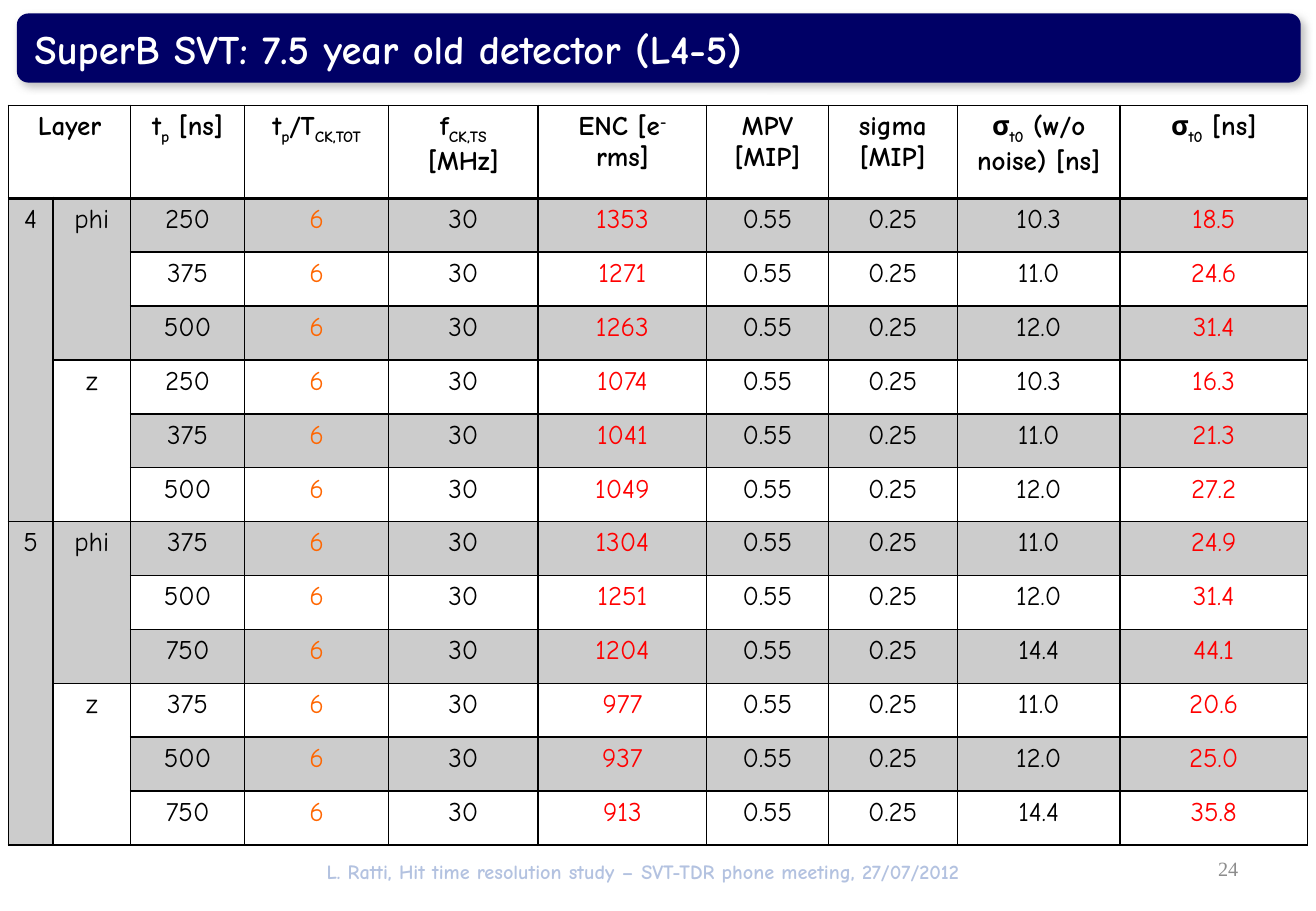
from lxml.etree import SubElement
from pptx import Presentation
from pptx.dml.color import RGBColor
from pptx.enum.shapes import MSO_SHAPE
from pptx.enum.text import MSO_ANCHOR, PP_ALIGN
from pptx.oxml.ns import qn
from pptx.util import Pt

BLACK = RGBColor(0, 0, 0)
WHITE = RGBColor(255, 255, 255)
NAVY = RGBColor(0, 0, 0x66)
BLUE = RGBColor(0, 0x33, 0x99)
GRAY = RGBColor(0x8C, 0x8C, 0x8C)
RED = RGBColor(255, 0, 0)
ORANGE = RGBColor(255, 0x66, 0)
COMIC, TIMES = "Comic Neue", "Times New Roman"

TITLE = "SuperB SVT: 7.5 year old detector (L4-5)"
FOOTER = "L. Ratti, Hit time resolution study – SVT-TDR phone meeting, 27/07/2012"
PAGE = "24"

# Each heading is a list of (text, baseline shift in percent).
HEADS = [
    [("Layer", 0)],
    [],
    [("t", 0), ("p", -25), (" [ns]", 0)],
    [("t", 0), ("p", -25), ("/T", 0), ("CK,TOT", -25)],
    [("f", 0), ("CK,TS", -25), (" [MHz]", 0)],
    [("ENC [e", 0), ("- ", 30), ("rms]", 0)],
    [("MPV [MIP]", 0)],
    [("sigma [MIP]", 0)],
    [("σ", 0), ("t0", -25), (" (w/o noise) [ns]", 0)],
    [("σ", 0), ("t0", -25), (" [ns]", 0)],
]
# Layer, side, then (peaking time, ENC, time resolution)
GROUPS = [
    ("4", "phi", [("250", "1353", "18.5"), ("375", "1271", "24.6"), ("500", "1263", "31.4")]),
    ("4", "z", [("250", "1074", "16.3"), ("375", "1041", "21.3"), ("500", "1049", "27.2")]),
    ("5", "phi", [("375", "1304", "24.9"), ("500", "1251", "31.4"), ("750", "1204", "44.1")]),
    ("5", "z", [("375", "977", "20.6"), ("500", "937", "25.0"), ("750", "913", "35.8")]),
]
NOISELESS = {"250": "10.3", "375": "11.0", "500": "12.0", "750": "14.4"}
RATIO, CLOCK, MPV, SIGMA = "6", "30", "0.55", "0.25"
TINTS = {3: ORANGE, 5: RED, 9: RED}
WIDTHS = [26.5, 46, 67.5, 85.5, 88.5, 100, 72, 76.5, 96.5, 111]
HEAD_H, ROW_H = 55, 31.95
SIDE_ROWS, LAYER_ROWS = 3, 6


def style(para, size, color, bold=False, face=COMIC, align=PP_ALIGN.CENTER):
    para.alignment = align
    for run in para.runs:
        font = run.font
        font.size, font.bold, font.name = Pt(size), bold, face
        font.color.rgb = color


def fade(node, percent):
    """Make the solid fill inside node partly transparent."""
    color = node.find(qn("a:solidFill")).find(qn("a:srgbClr"))
    SubElement(color, qn("a:alpha"), val=str(percent * 1000))


def add_text(slide, box, text, *look, **more):
    frame = slide.shapes.add_textbox(*map(Pt, box)).text_frame
    frame.word_wrap = True
    frame.text = text
    style(frame.paragraphs[0], *look, **more)
    return frame


def add_panel(slide, kind, box, color, percent=100):
    panel = slide.shapes.add_shape(kind, *map(Pt, box))
    panel.shadow.inherit = False
    panel.line.fill.background()
    panel.fill.solid()
    panel.fill.fore_color.rgb = color
    if percent < 100:
        fade(panel.element.spPr, percent)
    return panel


def add_shadow(shape):
    effects = shape.element.spPr.find(qn("a:effectLst"))
    outer = SubElement(effects, qn("a:outerShdw"), blurRad=str(Pt(5)),
                       dist=str(Pt(3)), dir=str(45 * 60000), algn="tl", rotWithShape="0")
    color = SubElement(outer, qn("a:srgbClr"), val="808080")
    SubElement(color, qn("a:alpha"), val="50000")


def set_cell(cell, row, shaded):
    """Draw the borders, then the fill, as the schema orders them."""
    props = cell._tc.get_or_add_tcPr()
    heavy = {0: "lnB", 1: "lnT"}.get(row)
    for side in ("lnL", "lnR", "lnT", "lnB"):
        line = SubElement(props, qn("a:" + side), w=str(Pt(2 if side == heavy else 1)))
        fill = SubElement(line, qn("a:solidFill"))
        SubElement(fill, qn("a:srgbClr"), val=str(BLACK))
    if shaded:
        cell.fill.solid()
        cell.fill.fore_color.rgb = BLACK
        fade(props, 20)
    else:
        cell.fill.background()


def add_grid(slide):
    rows = [[layer, side, peak, RATIO, CLOCK, enc, MPV, SIGMA, NOISELESS[peak], res]
            for layer, side, runs in GROUPS for peak, enc, res in runs]
    count = len(rows) + 1
    height = HEAD_H + ROW_H * len(rows)
    grid = slide.shapes.add_table(count, len(WIDTHS), Pt(5), Pt(62.5),
                                  Pt(sum(WIDTHS)), Pt(height)).table
    grid.first_row = grid.horz_banding = False
    for col, width in zip(grid.columns, WIDTHS):
        col.width = Pt(width)
    for num, row in enumerate(grid.rows):
        row.height = Pt(ROW_H if num else HEAD_H)

    for col, parts in enumerate(HEADS):
        cell = grid.cell(0, col)
        set_cell(cell, 0, False)
        para = cell.text_frame.paragraphs[0]
        for text, shift in parts:
            run = para.add_run()
            run.text = text
            if shift:
                run._r.get_or_add_rPr().set("baseline", str(shift * 1000))
        style(para, 16, BLACK, True)

    spans = {0: LAYER_ROWS, 1: SIDE_ROWS}
    for num, values in enumerate(rows):
        for col, text in enumerate(values):
            cell = grid.cell(num + 1, col)
            first = num - num % spans.get(col, 1)
            set_cell(cell, num + 1, first % 2 == 0)
            if first == num:
                cell.text_frame.text = text
                style(cell.text_frame.paragraphs[0], 16, TINTS.get(col, BLACK))

    grid.cell(0, 0).merge(grid.cell(0, 1))
    for col, span in spans.items():
        for top in range(1, count, span):
            grid.cell(top, col).merge(grid.cell(top + span - 1, col))


def main():
    deck = Presentation()
    deck.slide_width, deck.slide_height = Pt(780), Pt(540)
    slide = deck.slides.add_slide(deck.slide_layouts[6])
    add_text(slide, (137.5, 506, 487.5, 21.5), FOOTER, 12, BLUE, True)
    add_panel(slide, MSO_SHAPE.RECTANGLE, (700, 502, 64, 27), WHITE, 40)
    bar = add_panel(slide, MSO_SHAPE.ROUNDED_RECTANGLE, (10, 8, 761, 41), NAVY)
    add_shadow(bar)
    add_panel(slide, MSO_SHAPE.RECTANGLE, (6, 463.5, 768, 72), WHITE, 70)
    page = add_text(slide, (558.5, 500.5, 182.5, 28.5), PAGE, 12, GRAY,
                    face=TIMES, align=PP_ALIGN.RIGHT)
    page.vertical_anchor = MSO_ANCHOR.MIDDLE
    add_grid(slide)
    add_text(slide, (13.5, 11, 731, 36), TITLE, 24, WHITE, True, align=PP_ALIGN.LEFT)
    deck.save("out.pptx")


if __name__ == "__main__":
    main()
